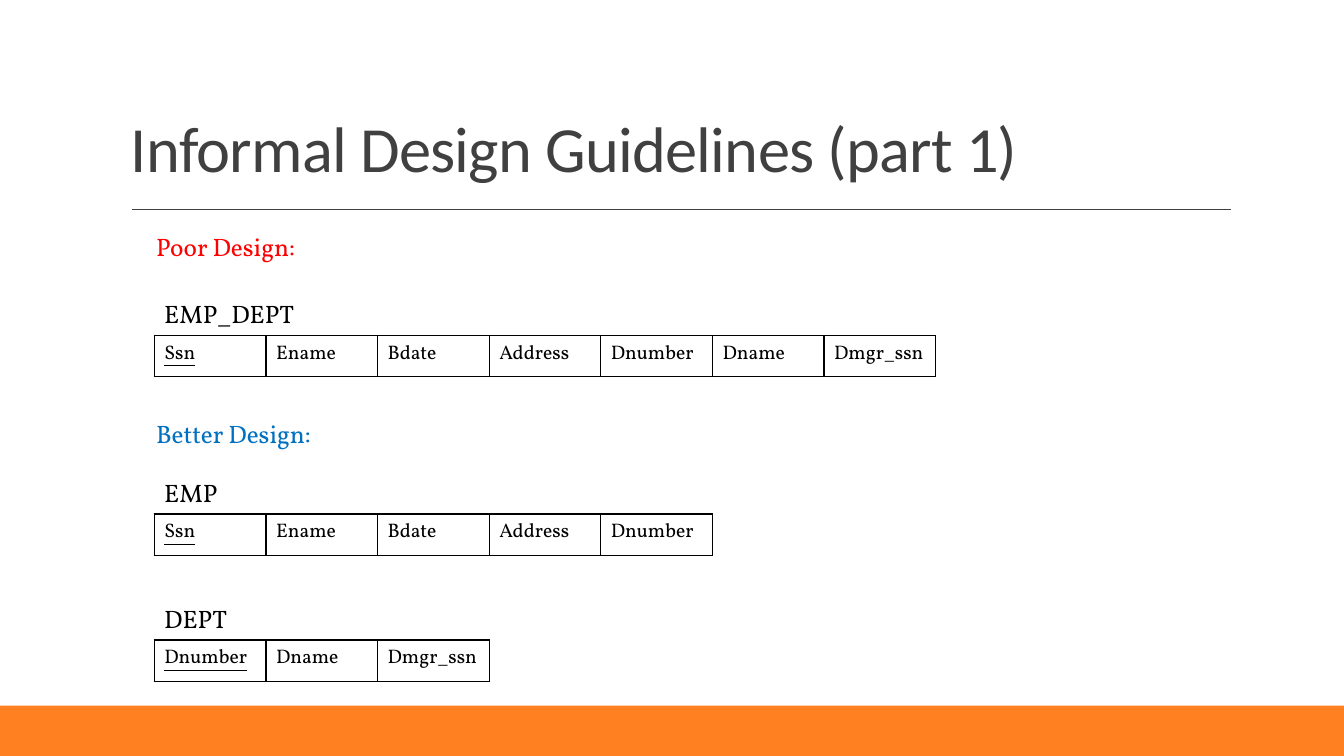
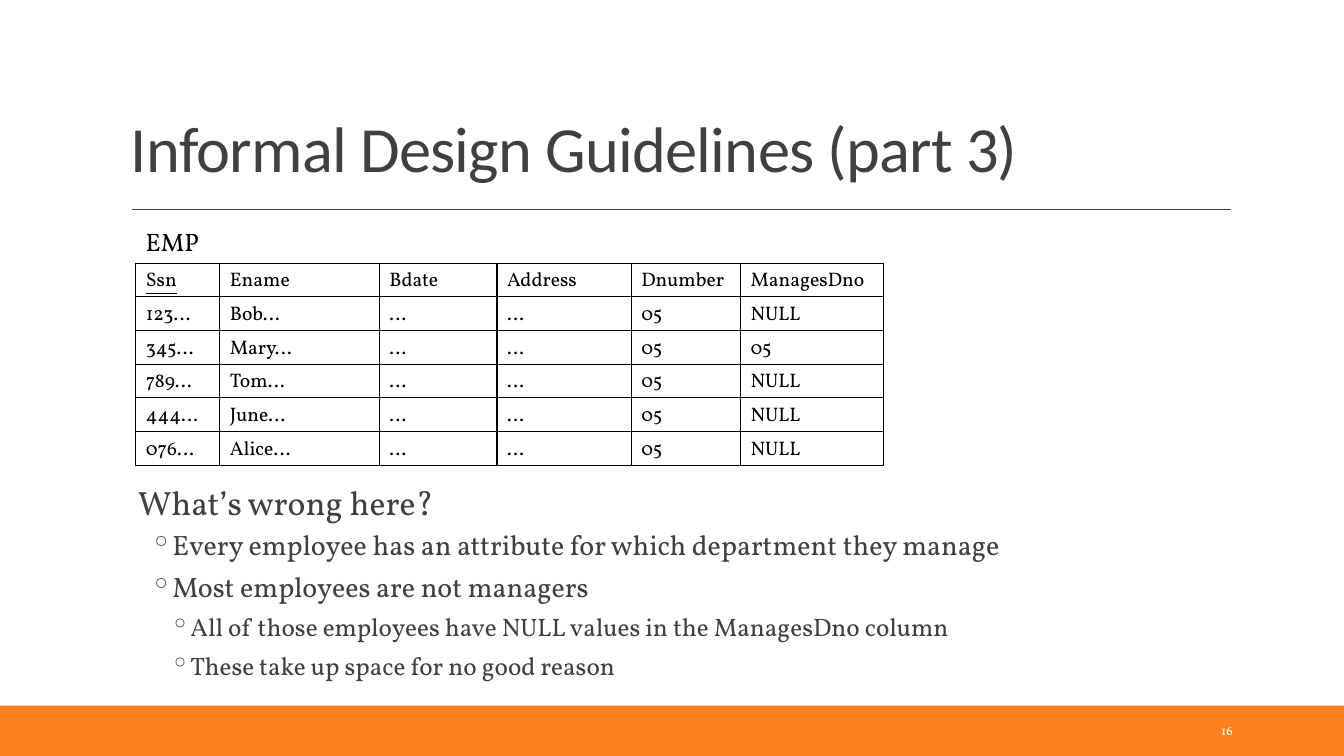
from pptx import Presentation
from pptx.dml.color import RGBColor
from pptx.enum import shapes, text
from pptx.oxml import parse_xml
from pptx.oxml.ns import nsdecls, qn
from pptx.util import Pt

BLACK, GREY, WHITE = "000000", "404040", "FFFFFF"
ORANGE, RED, BLUE = "FF8021", "FF0000", "0070C0"
SERIF, SANS = "Vollkorn", "Calibri"


def color(code):
    return RGBColor.from_string(code)


def style(para, size, code=BLACK, face=SERIF):
    font = para.font
    font.size, font.name = Pt(size), face
    font.color.rgb = color(code)


def label(slide, box, words, size=18, code=BLACK, face=SERIF, wrap=False):
    item = slide.shapes.add_textbox(*map(Pt, box))
    frame = item.text_frame
    frame.word_wrap = wrap
    para = frame.paragraphs[0]
    para.text = words
    style(para, size, code, face)
    return item


def base(deck, title):
    slide = deck.slides.add_slide(deck.slide_layouts[6])
    band = slide.shapes.add_shape(
        shapes.MSO_SHAPE.RECTANGLE, 0, Pt(504), Pt(960), Pt(36))
    band.shadow.inherit = False
    band.fill.solid()
    band.fill.fore_color.rgb = color(ORANGE)
    band.line.fill.background()

    rule = slide.shapes.add_connector(
        shapes.MSO_CONNECTOR.STRAIGHT, Pt(94.3), Pt(149.8), Pt(879), Pt(149.8))
    rule.line.color.rgb = color(GREY)
    rule.line.width = Pt(1)
    props = rule.element.find(qn("p:spPr"))
    props.append(parse_xml(f"<a:effectLst {nsdecls('a')}/>"))

    head = label(slide, (86.4, 22.5, 792, 114.5), title, 46, GREY, SANS, True)
    head.text_frame.vertical_anchor = text.MSO_ANCHOR.BOTTOM
    head.text_frame.paragraphs[0].line_spacing = 0.9
    for run in head.element.iter(qn("a:r")):
        run.get_or_add_rPr().set("spc", "-50")
    return slide


def border(props):
    for side in "LRTB":
        props.append(parse_xml(
            f'<a:ln{side} {nsdecls("a")} w="12700"><a:solidFill>'
            f'<a:srgbClr val="{BLACK}"/></a:solidFill></a:ln{side}>'))


def table(slide, left, top, name, rows, cols, high):
    label(slide, (left, top - 30, 12 * len(name) + 18, 29), name)
    item = slide.shapes.add_table(
        len(rows), len(cols), Pt(left), Pt(top),
        Pt(sum(cols)), Pt(high * len(rows)))
    grid = item.table
    grid.first_row = grid.horz_banding = False
    for col, wide in zip(grid.columns, cols):
        col.width = Pt(wide)
    for tc in item.element.iter(qn("a:tc")):
        border(tc.get_or_add_tcPr())
    for r, row in enumerate(rows):
        grid.rows[r].height = Pt(high)
        for c, words in enumerate(row):
            cell = grid.cell(r, c)
            cell.fill.background()
            para = cell.text_frame.paragraphs[0]
            para.text = words
            style(para, 14)
    grid.cell(0, 0).text_frame.paragraphs[0].font.underline = True


def outline(slide, box, lines):
    levels = [(24, 7.2, 0), (20, 30.2, -14.4), (18, 44.6, -14.4)]
    item = slide.shapes.add_textbox(*map(Pt, box))
    frame = item.text_frame
    frame.word_wrap = True
    frame.margin_left = frame.margin_right = 0
    for i, (level, words) in enumerate(lines):
        para = frame.add_paragraph() if i else frame.paragraphs[0]
        para.text = words
        para.level = level
        size, left, hang = levels[level]
        props = para._p.get_or_add_pPr()
        props.set("marL", str(Pt(left)))
        props.set("indent", str(Pt(hang)))
        if level:
            para.space_before, para.space_after = Pt(2), Pt(4)
            props.append(parse_xml(f'<a:buChar {nsdecls("a")} char="◦"/>'))
        else:
            para.line_spacing, para.space_after = 1.1, Pt(2)
        style(para, size, GREY)


def designs(deck):
    slide = base(deck, "Informal Design Guidelines (part 1)")
    label(slide, (104.4, 162, 114.5, 29), "Poor Design:", code=RED)
    label(slide, (104.4, 295.2, 129.6, 29), "Better Design:", code=BLUE)
    staff = ["Ssn", "Ename", "Bdate", "Address", "Dnumber"]
    unit = ["Dname", "Dmgr_ssn"]
    for top, name, fields in [
        (239.6, "EMP_DEPT", staff + unit),
        (367.2, "EMP", staff),
        (457.2, "DEPT", staff[-1:] + unit),
    ]:
        table(slide, 110.2, top, name, [fields], [79.75] * len(fields), 29.5)


def nulls(deck):
    slide = base(deck, "Informal Design Guidelines (part 3)")
    people = [("123…", "Bob…", "NULL"), ("345…", "Mary…", "05"),
              ("789…", "Tom…", "NULL"), ("444…", "June…", "NULL"),
              ("076…", "Alice…", "NULL")]
    rows = [["Ssn", "Ename", "Bdate", "Address", "Dnumber", "ManagesDno"]]
    rows += [[ssn, name, "…", "…", "05", runs] for ssn, name, runs in people]
    table(slide, 97, 188, "EMP", rows, [60, 114, 84, 96, 78, 102], 24)
    outline(slide, (91.4, 337.7, 648, 156), [
        (0, "What’s wrong here?"),
        (1, "Every employee has an attribute for which department they manage"),
        (1, "Most employees are not managers"),
        (2, "All of those employees have NULL values in the ManagesDno column"),
        (2, "These take up space for no good reason"),
    ])
    page = label(slide, (865.4, 507.6, 61.2, 28.8), "16", 9, WHITE, wrap=True)
    page.text_frame.vertical_anchor = text.MSO_ANCHOR.MIDDLE


def main():
    deck = Presentation()
    deck.slide_width, deck.slide_height = Pt(960), Pt(540)
    designs(deck)
    nulls(deck)
    deck.save("out.pptx")


if __name__ == "__main__":
    main()
